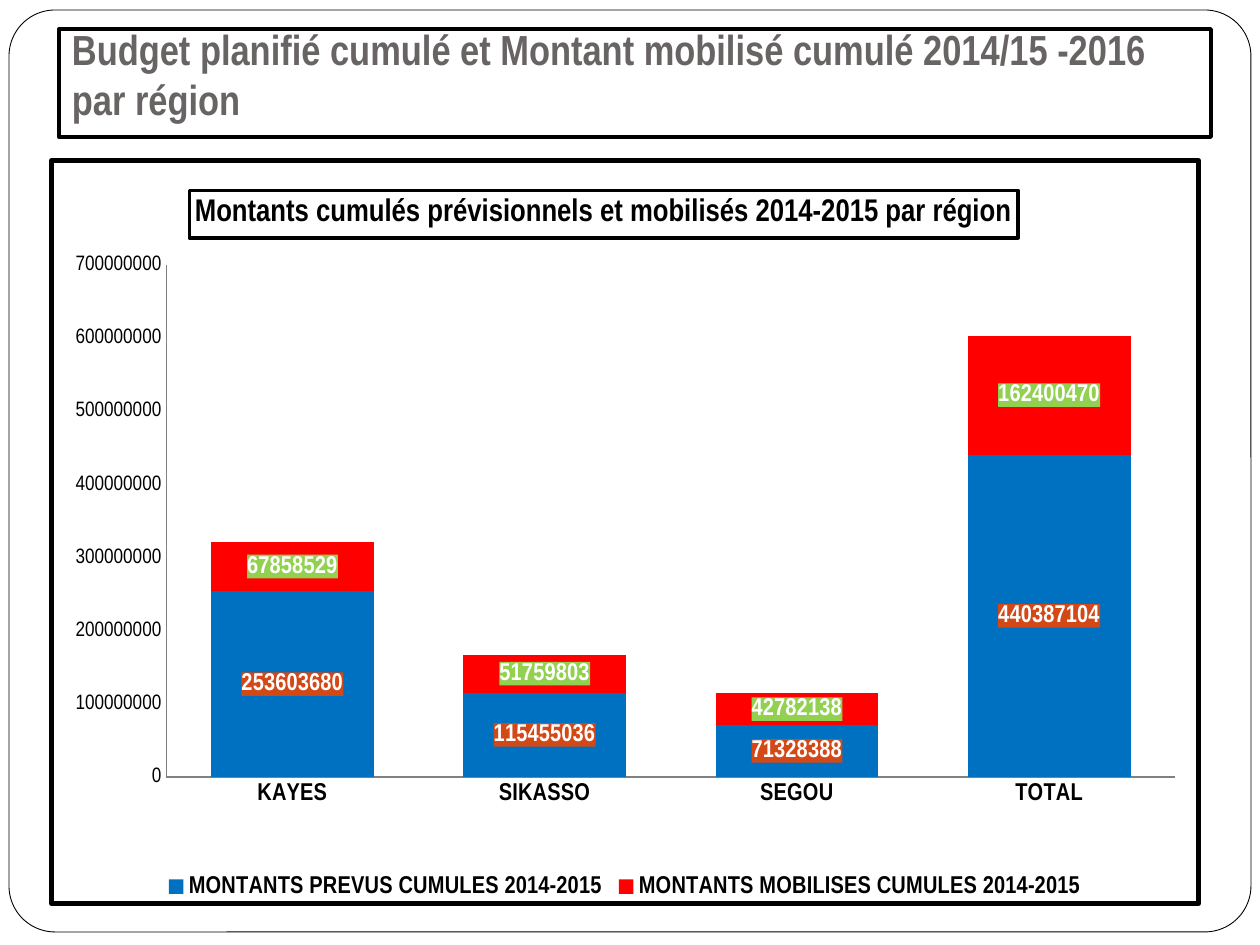
from dataclasses import dataclass

import lxml.etree
import pptx
import pptx.chart.data
import pptx.dml.color
import pptx.enum.chart
import pptx.enum.shapes
import pptx.enum.text
import pptx.oxml
import pptx.oxml.ns
import pptx.util

EMU_PER_PX = 914400 / 126


@dataclass(frozen=True)
class Theme:
    font: str = "Arial Narrow"
    chart_font: str = "Times New Roman"
    black: str = "000000"
    white: str = "FFFFFF"
    heading: str = "696464"
    axis: str = "808080"
    planned: str = "0070C0"
    planned_label: str = "D34817"
    mobilised: str = "FF0000"
    mobilised_label: str = "92D050"
    heading_size: int = 24
    chart_title_size: int = 18
    label_size: int = 14
    value_size: int = 12
    base_size: int = 10


@dataclass(frozen=True)
class Box:
    x: int
    y: int
    w: int
    h: int

    def emu(self) -> list[int]:
        return [px(v) for v in (self.x, self.y, self.w, self.h)]


@dataclass(frozen=True)
class Panel:
    box: Box
    preset: int
    line_width: float
    fill: str | None = None
    radius: float | None = None


@dataclass(frozen=True)
class Series:
    name: str
    values: tuple[int, ...]
    color: str
    label_fill: str


T = Theme()
RECT = pptx.enum.shapes.MSO_SHAPE.RECTANGLE
ROUND = pptx.enum.shapes.MSO_SHAPE.ROUNDED_RECTANGLE
FRAME = Panel(Box(9, 10, 1242, 922), ROUND, 0.5, T.white, 0.05)
HEADING = Panel(Box(59, 29, 1152, 108), RECT, 2.25)
CHART_BOX = Box(49, 158, 1152, 748)
CATEGORIES = ("KAYES", "SIKASSO", "SEGOU", "TOTAL")
SERIES = (
    Series("MONTANTS PREVUS CUMULES 2014-2015",
           (253603680, 115455036, 71328388, 440387104), T.planned, T.planned_label),
    Series("MONTANTS MOBILISES CUMULES 2014-2015",
           (67858529, 51759803, 42782138, 162400470), T.mobilised, T.mobilised_label),
)


def px(value: int) -> int:
    return round(value * EMU_PER_PX)


def rgb(color: str) -> pptx.dml.color.RGBColor:
    return pptx.dml.color.RGBColor.from_string(color)


def style_font(font, size: int, color: str = T.black, bold: bool = False,
               name: str = T.font) -> None:
    font.size = pptx.util.Pt(size)
    font.bold = bold
    font.name = name
    font.color.rgb = rgb(color)


def write_text(tf, text: str, **fmt) -> None:
    p = tf.paragraphs[0]
    r = p.add_run()
    r.text = text
    style_font(r.font, **fmt)


def set_line(line, width: float, color: str = T.black) -> None:
    line.color.rgb = rgb(color)
    line.width = pptx.util.Pt(width)


def add_panel(s, panel: Panel):
    sp = s.shapes.add_shape(panel.preset, *panel.box.emu())
    sp.shadow.inherit = False
    if panel.radius is not None:
        sp.adjustments[0] = panel.radius
    if panel.fill:
        sp.fill.solid()
        sp.fill.fore_color.rgb = rgb(panel.fill)
    else:
        sp.fill.background()
    set_line(sp.line, panel.line_width)
    return sp


def add_heading(s, panel: Panel, text: str) -> None:
    tf = add_panel(s, panel).text_frame
    tf.word_wrap = True
    tf.vertical_anchor = pptx.enum.text.MSO_ANCHOR.BOTTOM
    tf.margin_left = tf.margin_right = tf.margin_bottom = px(13)
    tf.margin_top = px(6)
    tf.paragraphs[0].alignment = pptx.enum.text.PP_ALIGN.LEFT
    write_text(tf, text, size=T.heading_size, color=T.heading, bold=True)


def chart_xml(tag: str, body: str):
    ns = pptx.oxml.ns.nsdecls("c", "a")
    return pptx.oxml.parse_xml(f"<c:{tag} {ns}>{body}</c:{tag}>")


def solid(color: str) -> str:
    return f'<a:solidFill><a:srgbClr val="{color}"/></a:solidFill>'


def layout(**values: float | str):
    body = "".join(f'<c:{k} val="{v}"/>' for k, v in values.items())
    return chart_xml("layout", f"<c:manualLayout>{body}</c:manualLayout>")


def place(parent, new_layout, before: str) -> None:
    for old in parent.findall(pptx.oxml.ns.qn("c:layout")):
        parent.remove(old)
    parent.find(pptx.oxml.ns.qn(before)).addprevious(new_layout)


def style_axis(axis, size: int, bold: bool) -> None:
    axis.has_major_gridlines = False
    axis.major_tick_mark = axis.minor_tick_mark = pptx.enum.chart.XL_TICK_MARK.NONE
    set_line(axis.format.line, 0.75, T.axis)
    style_font(axis.tick_labels.font, size, bold=bold)


def style_series(ser, data: Series) -> None:
    ser.format.fill.solid()
    ser.format.fill.fore_color.rgb = rgb(data.color)
    labels = ser.data_labels
    labels.show_value = True
    labels.position = pptx.enum.chart.XL_LABEL_POSITION.CENTER
    style_font(labels.font, T.label_size, T.white, True)
    txt = ser._element.find(pptx.oxml.ns.qn("c:dLbls")).find(pptx.oxml.ns.qn("c:txPr"))
    txt.addprevious(chart_xml("spPr", solid(data.label_fill)))


def add_budget_chart(s, title: str) -> None:
    data = pptx.chart.data.CategoryChartData(number_format="General")
    data.categories = CATEGORIES
    for item in SERIES:
        data.add_series(item.name, item.values)
    kind = pptx.enum.chart.XL_CHART_TYPE.COLUMN_STACKED
    chart = s.shapes.add_chart(kind, *CHART_BOX.emu(), data).chart
    style_font(chart.font, T.base_size, name=T.chart_font)

    chart.has_title = True
    write_text(chart.chart_title.text_frame, title, size=T.chart_title_size, bold=True)
    set_line(chart.chart_title.format.line, 2)
    place(chart.chart_title._element,
          layout(xMode="edge", yMode="edge", x=0.12, y=0.04), "c:overlay")

    plot = chart.plots[0]
    plot.gap_width = 55
    plot.overlap = 100
    plot.vary_by_categories = False
    for ser, item in zip(plot.series, SERIES):
        style_series(ser, item)
    style_axis(chart.category_axis, T.label_size, True)
    style_axis(chart.value_axis, T.value_size, False)
    chart.value_axis.minimum_scale = 0
    chart.value_axis.maximum_scale = 700_000_000
    chart.value_axis.major_unit = 100_000_000

    chart.has_legend = True
    chart.legend.position = pptx.enum.chart.XL_LEGEND_POSITION.BOTTOM
    chart.legend.include_in_layout = False
    style_font(chart.legend.font, T.label_size, bold=True)

    root = chart._chartSpace
    area = root.find(".//" + pptx.oxml.ns.qn("c:plotArea"))
    place(area, layout(layoutTarget="inner", xMode="edge", yMode="edge",
                       x=0.1, y=0.14, w=0.88, h=0.69), "c:barChart")
    border = f'<a:noFill/><a:ln w="{pptx.util.Pt(3)}">{solid(T.black)}</a:ln>'
    root.find(pptx.oxml.ns.qn("c:txPr")).addprevious(chart_xml("spPr", border))


def main() -> None:
    prs = pptx.Presentation()
    prs.slide_width, prs.slide_height = px(1260), px(945)
    s = prs.slides.add_slide(prs.slide_layouts[6])
    add_panel(s, FRAME)
    add_heading(s, HEADING,
                "Budget planifié cumulé et Montant mobilisé cumulé 2014/15 -2016 par région")
    add_budget_chart(s, "Montants cumulés prévisionnels et mobilisés 2014-2015 par région")
    prs.save("out.pptx")


if __name__ == "__main__":
    main()
